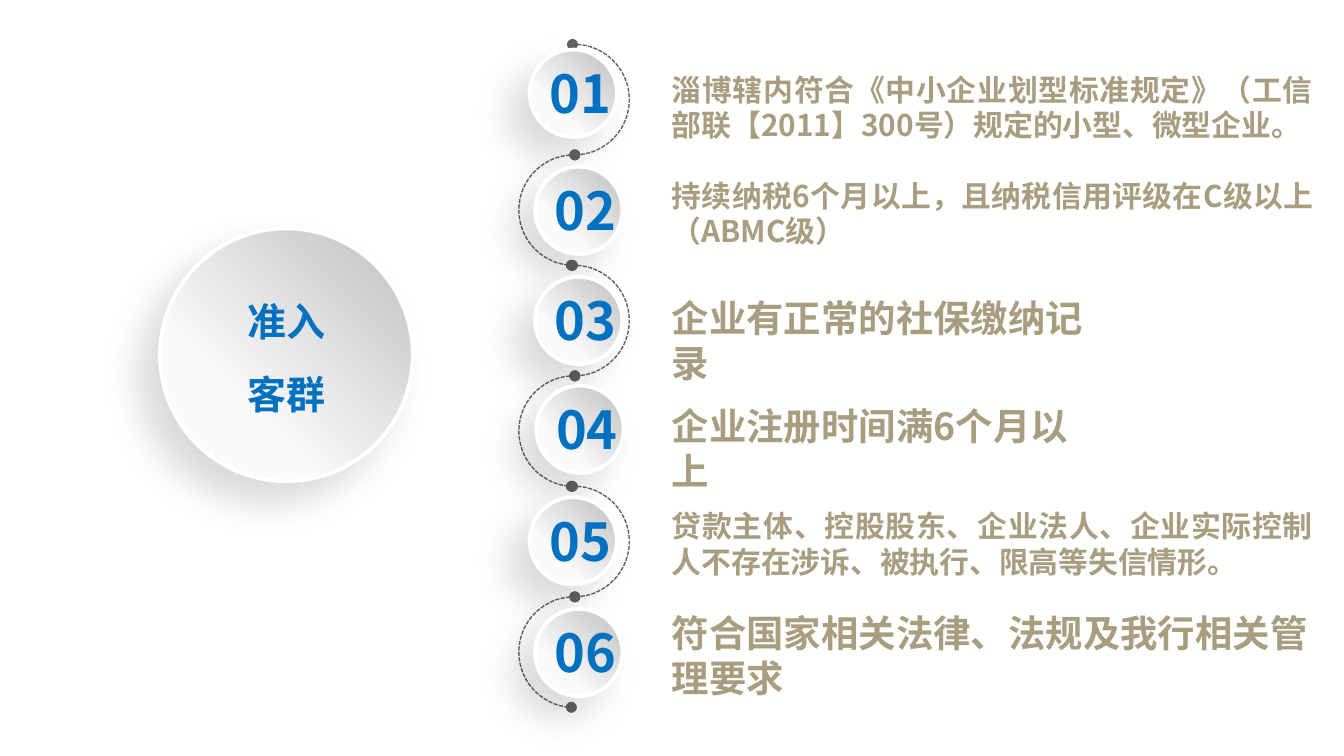
from lxml.etree import SubElement
from pptx import Presentation
from pptx.dml.color import RGBColor
from pptx.enum.dml import MSO_LINE
from pptx.enum.shapes import MSO_SHAPE as SHAPE
from pptx.enum.text import MSO_ANCHOR as ANCHOR, MSO_AUTO_SIZE as AUTO, PP_ALIGN as ALIGN
from pptx.oxml.ns import qn
from pptx.util import Pt

WHITE = RGBColor(0xFF, 0xFF, 0xFF)
SILVER = RGBColor(0xBF, 0xBF, 0xBF)
PALE = RGBColor(0xFA, 0xFA, 0xFA)
GREY = RGBColor(0x62, 0x62, 0x62)
BLUE = RGBColor(0x00, 0x70, 0xC0)
TAN = RGBColor(0xA8, 0x9D, 0x7F)

ARC_SIZE = 59.2
ARC_LEFT, ARC_TOP = 278, 23.8
TEXT_LEFT = 352.8

# badge left, badge top, text top, text width, text size, text
CONDITIONS = [
    (283.7, 26.6, 34.6, 358, 16, "淄博辖内符合《中小企业划型标准规定》（工信部联【2011】300号）规定的小型、微型企业。"),
    (286.6, 89.3, 91.4, 358, 16, "持续纳税6个月以上，且纳税信用评级在C级以上（ABMC级）"),
    (286.6, 148.3, 154.8, 245, 20, "企业有正常的社保缴纳记录"),
    (287.3, 206.6, 212.4, 245, 20, "企业注册时间满6个月以上"),
    (283.7, 266.4, 268.6, 358, 16, "贷款主体、控股股东、企业法人、企业实际控制人不存在涉诉、被执行、限高等失信情形。"),
    (286.6, 326.2, 323.3, 358, 20, "符合国家相关法律、法规及我行相关管理要求"),
]


def write(tf, text, size, color, align=ALIGN.LEFT, spacing=None, baseline=None,
          anchor=ANCHOR.TOP, wrap=True, font="Noto Sans CJK SC"):
    """Fill a text frame, one paragraph per line of text."""
    tf.word_wrap = wrap
    tf.auto_size = AUTO.SHAPE_TO_FIT_TEXT
    tf.vertical_anchor = anchor
    for i, line in enumerate(text.split("\n")):
        p = tf.add_paragraph() if i else tf.paragraphs[0]
        p.alignment = align
        p.line_spacing = spacing
        r = p.add_run()
        r.text = line
        r.font.size, r.font.bold, r.font.name = Pt(size), True, font
        r.font.color.rgb = color
        rPr = r.font._element
        SubElement(rPr, qn("a:ea"), typeface=font)
        if baseline:
            rPr.set("baseline", str(baseline * 1000))


class Deck:
    def __init__(self, width, height):
        self.prs = Presentation()
        self.prs.slide_width, self.prs.slide_height = Pt(width), Pt(height)
        self.slide = self.prs.slides.add_slide(self.prs.slide_layouts[5])

    def title(self, x, y, w, h, text, **style):
        """Place the title in front of the shapes drawn so far."""
        sp = self.slide.shapes.title
        sp.left, sp.top, sp.width, sp.height = Pt(x), Pt(y), Pt(w), Pt(h)
        write(sp.text_frame, text, **style)
        sp.element.getparent().append(sp.element)

    def text(self, x, y, w, h, text, **style):
        sp = self.slide.shapes.add_textbox(Pt(x), Pt(y), Pt(w), Pt(h))
        write(sp.text_frame, text, **style)

    def disc(self, x, y, size):
        """Draw a shaded circle with a soft shadow at its lower left."""
        sp = self.slide.shapes.add_shape(SHAPE.OVAL, Pt(x), Pt(y), Pt(size), Pt(size))
        sp.fill.gradient()
        sp.fill.gradient_angle = 225
        for stop, color, position in zip(sp.fill.gradient_stops, (SILVER, PALE), (0, 0.7)):
            stop.color.rgb, stop.position = color, position
        sp.line.color.rgb, sp.line.width = WHITE, Pt(2)
        sp.shadow.inherit = False
        effects = sp.element.spPr.find(qn("a:effectLst"))
        shadow = SubElement(effects, qn("a:outerShdw"), blurRad=str(Pt(20)), dist=str(Pt(15)),
                            dir=str(135 * 60000), algn="tr", rotWithShape="0")
        color = SubElement(shadow, qn("a:srgbClr"), val="000000")
        SubElement(color, qn("a:alpha"), val="15000")

    def arc(self, x, y, size, flip):
        """Draw a dashed half circle with dots at both ends."""
        sp = self.slide.shapes.add_shape(SHAPE.ARC, Pt(x), Pt(y), Pt(size), Pt(size))
        sp.adjustments[0] = 161.5 if flip else 161
        sp.adjustments[1] = 52.3 if flip else 53.57
        sp.shadow.inherit = False
        sp.fill.background()
        sp.line.color.rgb, sp.line.width = GREY, Pt(0.75)
        sp.line.dash_style = MSO_LINE.SQUARE_DOT
        ln = sp.element.spPr.find(qn("a:ln"))
        for end in ("a:headEnd", "a:tailEnd"):
            SubElement(ln, qn(end), type="oval")
        if flip:
            sp.element.spPr.find(qn("a:xfrm")).set("flipH", "1")

    def badge(self, x, y, number):
        self.disc(x, y, 46.8)
        self.text(x + 2.2, y + 2.5, 49.7, 41, f"{number:02}", size=28, color=BLUE,
                  align=ALIGN.CENTER, anchor=ANCHOR.MIDDLE, wrap=False)


def main():
    deck = Deck(720, 405)
    deck.disc(85.7, 122.4, 135.4)
    deck.title(94.3, 163.4, 118.8, 58.3, "准入\n客群", size=36, color=BLUE, align=ALIGN.CENTER,
               spacing=0.9, baseline=12, anchor=ANCHOR.MIDDLE)
    for i in range(len(CONDITIONS)):
        deck.arc(ARC_LEFT, ARC_TOP + i * ARC_SIZE, ARC_SIZE, flip=i % 2 == 1)
    for number, (x, y, top, width, size, text) in enumerate(CONDITIONS, 1):
        deck.badge(x, y, number)
        deck.text(TEXT_LEFT, top, width, 46, text, size=size, color=TAN,
                  align=ALIGN.JUSTIFY if size == 16 else ALIGN.LEFT)
    deck.prs.save("out.pptx")


if __name__ == "__main__":
    main()
